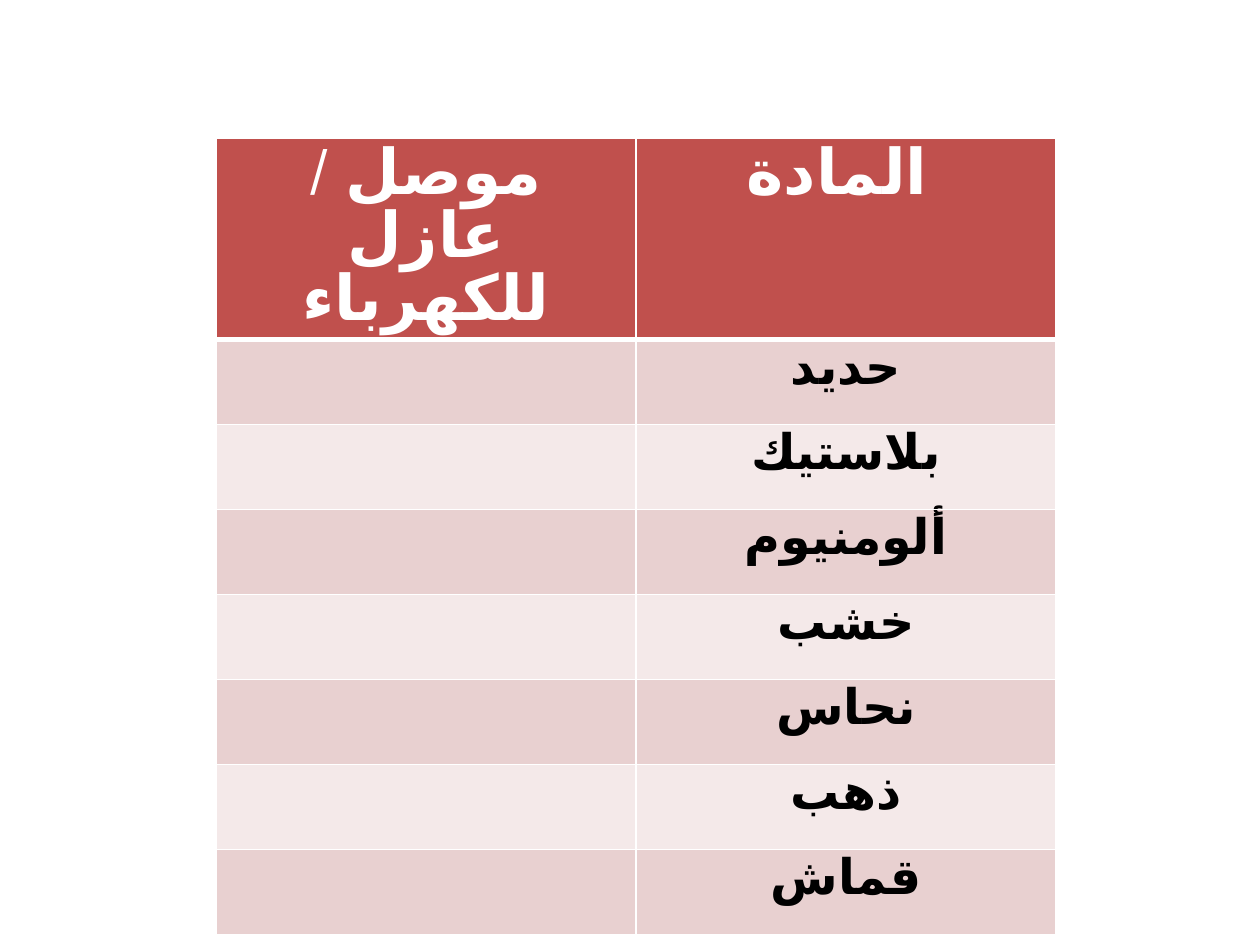
from pptx import Presentation
from pptx.dml.color import RGBColor
from pptx.enum.lang import MSO_LANGUAGE_ID as Lang
from pptx.enum.text import PP_ALIGN as Align
from pptx.oxml import parse_xml
from pptx.oxml.ns import nsdecls
from pptx.util import Pt

PX = 914400 // 126


def rgb(code):
    return RGBColor.from_string(code)


def edge(cell, side, width):
    """Add a white border; call in the order L, R, T, B and before the fill."""
    cell._tc.get_or_add_tcPr().append(parse_xml(
        f'<a:{side} {nsdecls("a")} w="{Pt(width)}"><a:solidFill>'
        f'<a:srgbClr val="FFFFFF"/></a:solidFill></a:{side}>'))


prs = Presentation()
prs.slide_width, prs.slide_height = 1260 * PX, 945 * PX
slide = prs.slides.add_slide(prs.slide_layouts[6])

# Materials, under a header row
head = ["موصل / عازل للكهرباء", "المادة "]
names = ["حديد", "بلاستيك", "ألومنيوم", "خشب", "نحاس", "ذهب", "قماش"]
rows = [head] + [["", name] for name in names]

# Table grid
left, top, col_w, head_h, row_h = 216, 138, 420, 118, 85
high = head_h + row_h * len(names)
table = slide.shapes.add_table(len(rows), 2, left * PX, top * PX,
                               2 * col_w * PX, high * PX).table
for col in table.columns:
    col.width = col_w * PX
for i, row in enumerate(table.rows):
    row.height = (row_h if i else head_h) * PX

# Cells: red header, then banded rows
bands = ["F4E9E9", "E8D0D0"]
for i, texts in enumerate(rows):
    fill = bands[i % 2] if i else "C0504D"
    looks = {"name": "Calibri", "bold": True, "size": Pt(28 if i else 36),
             "language_id": Lang.ARABIC}
    for j, text in enumerate(texts):
        cell = table.cell(i, j)
        for side in ("lnL", "lnR", "lnT", "lnB"):
            thick = (i, side) in ((0, "lnB"), (1, "lnT"))
            edge(cell, side, 3 if thick else 1)
        cell.fill.solid()
        cell.fill.fore_color.rgb = rgb(fill)
        par = cell.text_frame.paragraphs[0]
        par.alignment = Align.CENTER
        if text:
            run = par.add_run()
            run.text = text
            for key, value in looks.items():
                setattr(run.font, key, value)
            run.font.color.rgb = rgb("000000" if i else "FFFFFF")

prs.save("out.pptx")
